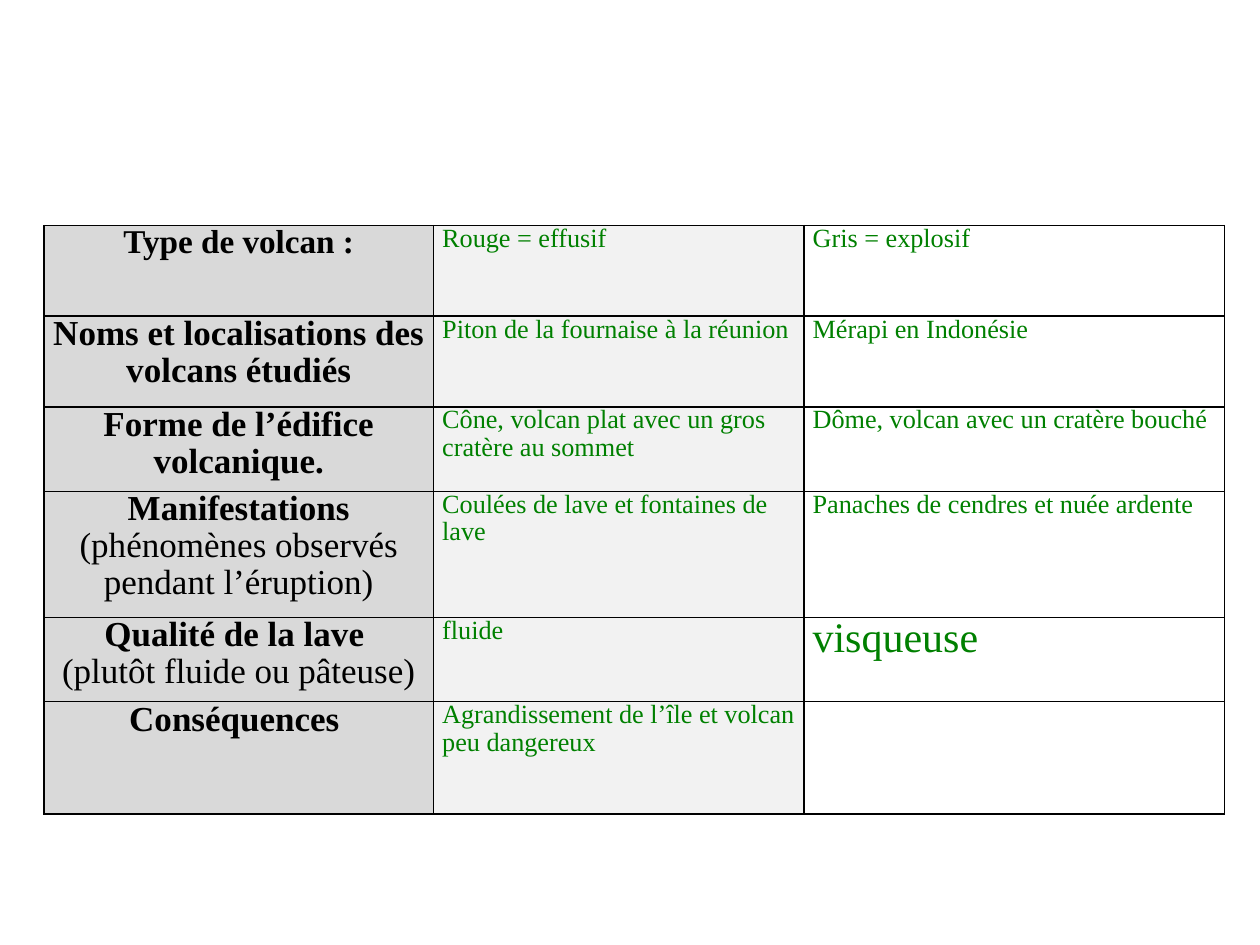
from lxml.etree import SubElement
from pptx import Presentation
from pptx.dml.color import RGBColor
from pptx.enum.text import MSO_ANCHOR, PP_ALIGN
from pptx.oxml.ns import qn
from pptx.util import Inches, Pt

BLACK = RGBColor(0x00, 0x00, 0x00)
GREEN = RGBColor(0x00, 0x80, 0x00)
HEADING_GRAY = RGBColor(0xD9, 0xD9, 0xD9)
LIGHT_GRAY = RGBColor(0xF2, 0xF2, 0xF2)

COLUMN_FILLS = [HEADING_GRAY, LIGHT_GRAY, None]
COLUMN_WIDTHS = [3.09, 2.94, 3.34]
ROW_HEIGHTS = [0.72, 0.72, 0.67, 1, 0.67, 0.89]
HEADING_SIZE = 20
ANSWER_SIZE = 15


def heading(text, size=HEADING_SIZE, bold=True):
    return text, size, BLACK, bold


def answer(text, size=ANSWER_SIZE):
    return [[(text, size, GREEN, False)]]


VOLCANO_ROWS = [
    ([[heading("Type de volcan :", size=19)]],
     answer("Rouge = effusif"),
     answer("Gris = explosif")),
    ([[heading("Noms et localisations des volcans étudiés")]],
     answer("Piton de la fournaise à la réunion"),
     answer("Mérapi en Indonésie")),
    ([[heading("Forme de l’édifice volcanique.")]],
     answer("Cône, volcan plat avec un gros cratère au sommet"),
     answer("Dôme, volcan avec un cratère bouché")),
    ([[heading("Manifestations "),
       heading("(phénomènes observés pendant l’éruption)", bold=False)]],
     answer("Coulées de lave et fontaines de lave"),
     answer("Panaches de cendres et nuée ardente")),
    ([[heading("Qualité de la lave ")],
      [heading("(plutôt fluide ou pâteuse)", bold=False)]],
     answer("fluide"),
     answer("visqueuse", size=24)),
    ([[heading("Conséquences ")]],
     answer("Agrandissement de l’île et volcan peu dangereux"),
     []),
]


class SlideBuilder:
    font_name = "Times New Roman"
    line_spacing = 0.95
    border_width = Pt(1)
    side_margin = Inches(0.07)

    def __init__(self, slide):
        self.slide = slide

    def add_table(self, left, top, widths, heights, rows, fills):
        frame = self.slide.shapes.add_table(
            len(heights), len(widths), Inches(left), Inches(top),
            Inches(sum(widths)), Inches(sum(heights)))
        table = frame.table
        table.first_row = False
        table.horz_banding = False
        for column, width in zip(table.columns, widths):
            column.width = Inches(width)
        for row, height, contents in zip(table.rows, heights, rows):
            row.height = Inches(height)
            for index, (cell, paragraphs) in enumerate(zip(row.cells, contents)):
                self.format_cell(cell, fills[index])
                alignment = PP_ALIGN.CENTER if index == 0 else PP_ALIGN.LEFT
                self.add_text(cell.text_frame, paragraphs, alignment)

    def format_cell(self, cell, fill_color):
        cell.margin_left = cell.margin_right = self.side_margin
        cell.margin_top = cell.margin_bottom = 0
        cell.vertical_anchor = MSO_ANCHOR.TOP
        self.add_borders(cell)
        if fill_color is None:
            cell.fill.background()
        else:
            cell.fill.solid()
            cell.fill.fore_color.rgb = fill_color

    def add_borders(self, cell):
        properties = cell._tc.get_or_add_tcPr()
        for side in ("a:lnL", "a:lnR", "a:lnT", "a:lnB"):
            line = SubElement(properties, qn(side), w=str(self.border_width))
            fill = SubElement(line, qn("a:solidFill"))
            SubElement(fill, qn("a:srgbClr"), val=str(BLACK))

    def add_text(self, text_frame, paragraphs, alignment):
        for index, runs in enumerate(paragraphs):
            paragraph = text_frame.add_paragraph() if index else text_frame.paragraphs[0]
            paragraph.alignment = alignment
            paragraph.line_spacing = self.line_spacing
            for text, size, color, bold in runs:
                run = paragraph.add_run()
                run.text = text
                run.font.name = self.font_name
                run.font.size = Pt(size)
                run.font.color.rgb = color
                run.font.bold = bold


def main():
    presentation = Presentation()
    presentation.slide_width = Inches(10)
    presentation.slide_height = Inches(7.5)
    blank_layout = presentation.slide_layouts[6]
    builder = SlideBuilder(presentation.slides.add_slide(blank_layout))
    builder.add_table(0.35, 1.79, COLUMN_WIDTHS, ROW_HEIGHTS, VOLCANO_ROWS, COLUMN_FILLS)
    presentation.save("out.pptx")


if __name__ == "__main__":
    main()
